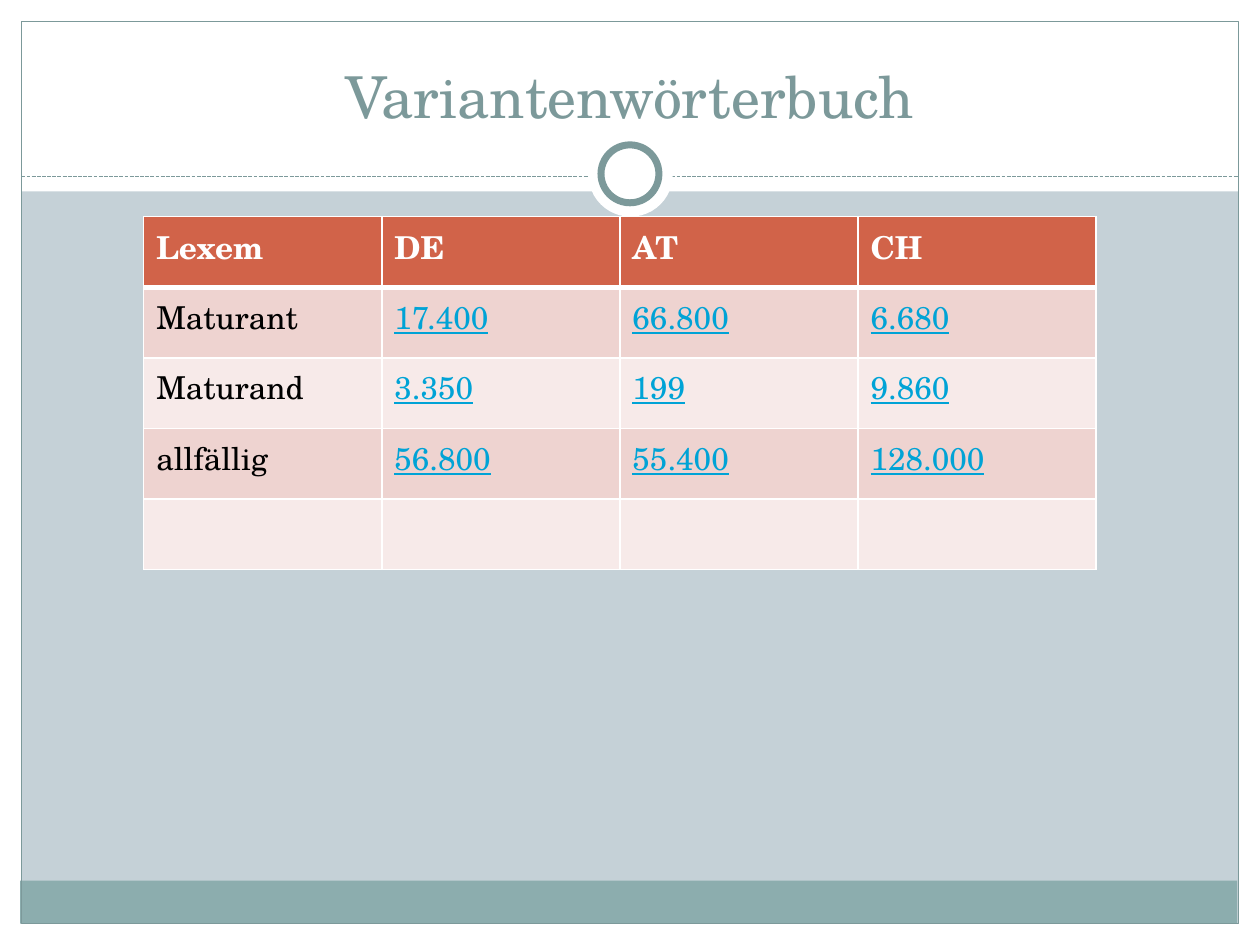
from dataclasses import dataclass
from typing import Optional

import lxml.etree
import pptx
import pptx.dml.color
import pptx.enum.dml
import pptx.enum.shapes
import pptx.enum.text
import pptx.oxml.ns
import pptx.util

Inches = pptx.util.Inches
Pt = pptx.util.Pt
SHAPES = pptx.enum.shapes.MSO_SHAPE


@dataclass(frozen=True)
class Theme:
    font: str = "TeX Gyre Schola"
    title_size: float = 33
    table_size: float = 18
    background: str = "C5D1D7"
    white: str = "FFFFFF"
    black: str = "000000"
    accent: str = "7C999A"
    footer: str = "8CADAE"
    header: str = "D16349"
    bands: tuple[str, str] = ("EED3D0", "F7EAE9")
    figure: str = "00A3D6"


THEME = Theme()


@dataclass(frozen=True)
class Panel:
    left: float
    top: float
    width: float
    height: float
    fill: Optional[str] = THEME.white
    line: Optional[str] = None
    line_width: float = 0.75
    kind: SHAPES = SHAPES.RECTANGLE


FRAME = [
    Panel(0, 7.33, 10, 0.17),
    Panel(0, 0, 10, 1.52),
    Panel(0, 0, 0.17, 7.5),
    Panel(9.83, 0, 0.17, 7.5),
    Panel(0.16, 6.99, 9.66, 0.34, fill=THEME.footer),
    Panel(0.17, 0.17, 9.66, 7.16, fill=None, line=THEME.accent),
]
RING = [
    Panel(4.67, 1.05, 0.67, 0.67, kind=SHAPES.OVAL),
    Panel(4.77, 1.15, 0.46, 0.46, line=THEME.accent, line_width=4, kind=SHAPES.OVAL),
]
FREQUENCIES = [
    ("Lexem", "DE", "AT", "CH"),
    ("Maturant", "17.400", "66.800", "6.680"),
    ("Maturand", "3.350", "199", "9.860"),
    ("allfällig", "56.800", "55.400", "128.000"),
    ("", "", "", ""),
]


def rgb(value: str) -> pptx.dml.color.RGBColor:
    return pptx.dml.color.RGBColor.from_string(value)


def style_font(font, size: float, color: str) -> None:
    font.name = THEME.font
    font.size = Pt(size)
    font.color.rgb = rgb(color)


def draw_panel(slide, panel: Panel) -> None:
    shape = slide.shapes.add_shape(
        panel.kind, Inches(panel.left), Inches(panel.top),
        Inches(panel.width), Inches(panel.height))
    shape.shadow.inherit = False
    if panel.fill:
        shape.fill.solid()
        shape.fill.fore_color.rgb = rgb(panel.fill)
    else:
        shape.fill.background()
    if panel.line:
        shape.line.color.rgb = rgb(panel.line)
        shape.line.width = Pt(panel.line_width)
    else:
        shape.line.fill.background()


def draw_divider(slide) -> None:
    divider = slide.shapes.add_connector(
        pptx.enum.shapes.MSO_CONNECTOR.STRAIGHT,
        Inches(0.17), Inches(1.4), Inches(9.83), Inches(1.4))
    divider.line.color.rgb = rgb(THEME.accent)
    divider.line.width = Pt(0.75)
    divider.line.dash_style = pptx.enum.dml.MSO_LINE.SQUARE_DOT
    lxml.etree.SubElement(divider._element.spPr, pptx.oxml.ns.qn("a:effectLst"))


def place_title(slide, text: str) -> None:
    """Fill the title placeholder and bring it in front of the frame."""
    title = slide.shapes.title
    title.left, title.top = Inches(0.33), Inches(0.25)
    title.width, title.height = Inches(9.33), Inches(0.83)
    title.text_frame.text = text
    title.text_frame.auto_size = pptx.enum.text.MSO_AUTO_SIZE.NONE
    title.text_frame.vertical_anchor = pptx.enum.text.MSO_ANCHOR.BOTTOM
    heading = title.text_frame.paragraphs[0]
    heading.alignment = pptx.enum.text.PP_ALIGN.CENTER
    style_font(heading.font, THEME.title_size, THEME.accent)
    slide.shapes._spTree.append(title._element)


def set_borders(cell, top: float, bottom: float) -> None:
    """Draw white cell borders; widths are in points, the sides are 1 pt."""
    qn = pptx.oxml.ns.qn
    properties = cell._tc.get_or_add_tcPr()
    widths = {"a:lnL": 1, "a:lnR": 1, "a:lnT": top, "a:lnB": bottom}
    for index, (side, width) in enumerate(widths.items()):
        border = lxml.etree.Element(qn(side), w=str(Pt(width)))
        fill = lxml.etree.SubElement(border, qn("a:solidFill"))
        lxml.etree.SubElement(fill, qn("a:srgbClr"), val=THEME.white)
        properties.insert(index, border)


def draw_table(slide, rows: list[tuple[str, ...]]) -> None:
    column_width, row_height = Inches(1.89), Inches(0.56)
    table = slide.shapes.add_table(
        len(rows), len(rows[0]), Inches(1.14), Inches(1.72),
        column_width * len(rows[0]), row_height * len(rows)).table
    for column in table.columns:
        column.width = column_width
    for row_index, row in enumerate(rows):
        is_header = row_index == 0
        for column_index, text in enumerate(row):
            is_figure = not is_header and column_index > 0
            cell = table.cell(row_index, column_index)
            cell.text = text
            cell.fill.solid()
            cell.fill.fore_color.rgb = rgb(
                THEME.header if is_header else THEME.bands[(row_index - 1) % 2])
            set_borders(cell, top=3 if row_index == 1 else 1,
                        bottom=3 if is_header else 1)
            color = (THEME.white if is_header
                     else THEME.figure if is_figure else THEME.black)
            font = cell.text_frame.paragraphs[0].font
            style_font(font, THEME.table_size, color)
            font.bold = is_header
            font.underline = is_figure


def main() -> None:
    deck = pptx.Presentation()
    deck.slide_width, deck.slide_height = Inches(10), Inches(7.5)
    slide = deck.slides.add_slide(deck.slide_layouts.get_by_name("Title Only"))
    slide.background.fill.solid()
    slide.background.fill.fore_color.rgb = rgb(THEME.background)
    for panel in FRAME:
        draw_panel(slide, panel)
    draw_divider(slide)
    for panel in RING:
        draw_panel(slide, panel)
    place_title(slide, "Variantenwörterbuch")
    draw_table(slide, FREQUENCIES)
    deck.save("out.pptx")


if __name__ == "__main__":
    main()
